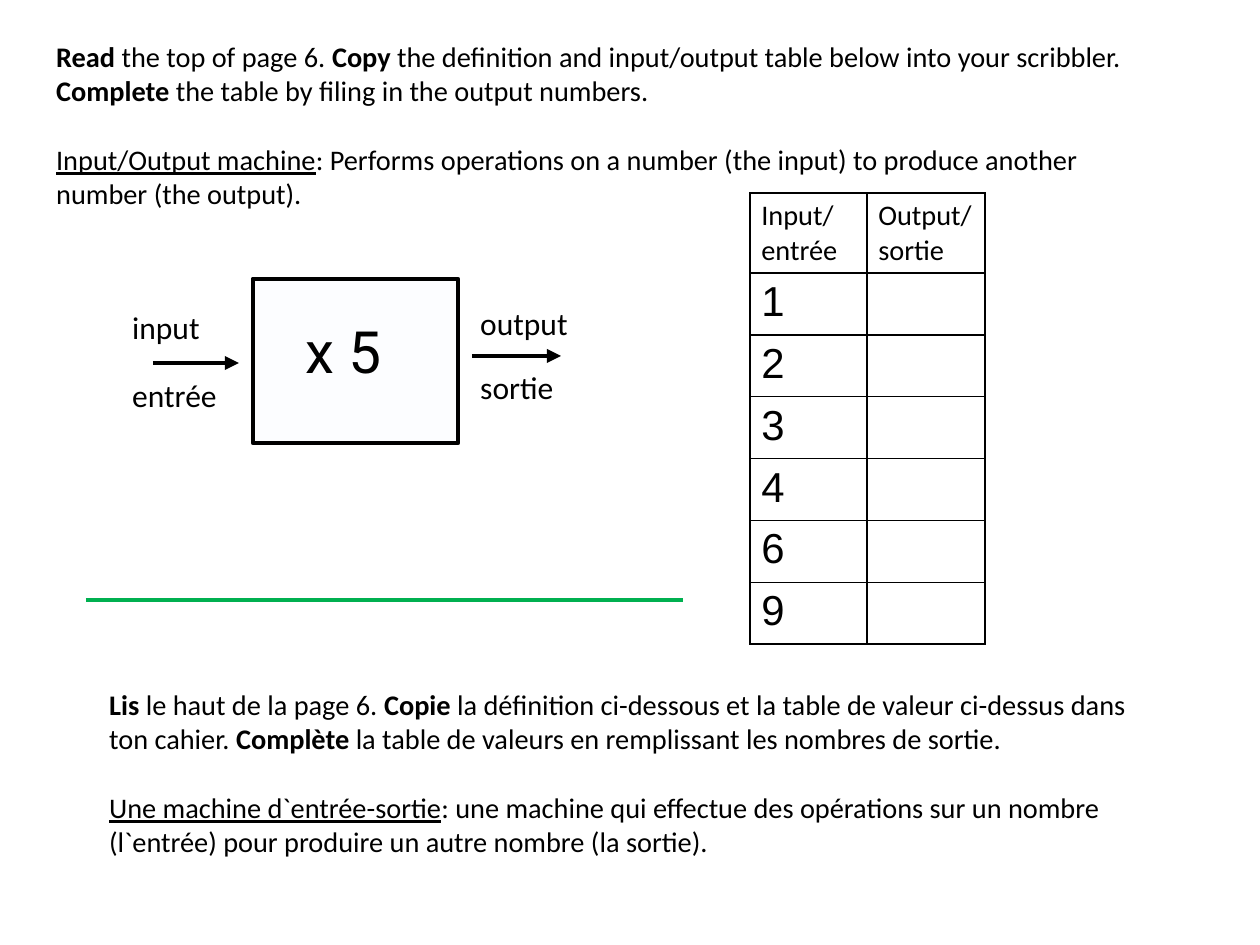
"""Build the bilingual input/output machine slide."""
from lxml.etree import SubElement
from pptx import Presentation
from pptx.dml.color import RGBColor
from pptx.enum.shapes import MSO_CONNECTOR, MSO_SHAPE
from pptx.oxml.ns import qn
from pptx.util import Pt

PX = 8064
COLORS = {"ink": "000000", "paper": "FFFFFF", "machine": "FCFDFF", "divider": "00B050"}


def add_text(paragraph, text, size=18, font="Calibri", bold=False, underline=False):
    run = paragraph.add_run()
    run.text = text
    run.font.size = Pt(size)
    run.font.name = font
    run.font.bold = bold
    run.font.underline = underline
    run.font.color.rgb = RGBColor.from_string(COLORS["ink"])


presentation = Presentation()
presentation.slide_width = 1260 * PX
presentation.slide_height = 945 * PX
slide = presentation.slides.add_slide(presentation.slide_layouts[6])
shapes = slide.shapes

instructions = [
    (98, 682, 1078, 184, [
        [("Lis", "bold"), (" le haut de la page 6. ", None), ("Copie", "bold"),
         (" la définition ci-dessous et la table de valeur ci-dessus dans ton cahier. ", None),
         ("Complète", "bold"),
         (" la table de valeurs en remplissant les nombres de sortie.", None)],
        [("Une machine d`entrée-sortie", "underline"),
         (": une machine qui effectue des opérations sur un nombre (l`entrée) "
          "pour produire un autre nombre (la sortie).", None)],
    ]),
    (45, 34, 1107, 223, [
        [("Read", "bold"), (" the top of page 6. ", None), ("Copy", "bold"),
         (" the definition and input/output table below into your scribbler. ", None),
         ("Complete", "bold"),
         (" the table by filing in the output numbers.", None)],
        [("Input/Output machine", "underline"),
         (": Performs operations on a number (the input) to produce another "
          "number (the output).", None)],
    ]),
]
for left, top, width, height, (task, definition) in instructions:
    frame = shapes.add_textbox(left * PX, top * PX, width * PX, height * PX).text_frame
    frame.word_wrap = True
    for text, emphasis in task:
        add_text(frame.paragraphs[0], text, **({emphasis: True} if emphasis else {}))
    paragraph = frame.add_paragraph()
    paragraph.space_before = Pt(22)
    for text, emphasis in definition:
        add_text(paragraph, text, **({emphasis: True} if emphasis else {}))

machine = shapes.add_shape(MSO_SHAPE.RECTANGLE, 253 * PX, 279 * PX, 205 * PX, 164 * PX)
machine.shadow.inherit = False
machine.fill.solid()
machine.fill.fore_color.rgb = RGBColor.from_string(COLORS["machine"])
machine.line.color.rgb = RGBColor.from_string(COLORS["ink"])
machine.line.width = Pt(3)

lines = [
    (153, 239, 363, "ink", True),
    (472, 561, 356, "ink", True),
    (86, 683, 600, "divider", False),
]
for start, end, y, color, arrow in lines:
    line = shapes.add_connector(MSO_CONNECTOR.STRAIGHT, start * PX, y * PX, end * PX, y * PX)
    line.line.color.rgb = RGBColor.from_string(COLORS[color])
    line.line.width = Pt(3)
    if arrow:
        SubElement(line.line._get_or_add_ln(), qn("a:tailEnd"), type="triangle")
    SubElement(line._element.spPr, qn("a:effectLst"))

labels = [
    ("input", 121, 302, 152, 50, 20, "Calibri"),
    ("entrée", 121, 370, 152, 50, 20, "Calibri"),
    ("output", 469, 298, 133, 50, 20, "Calibri"),
    ("sortie", 469, 362, 133, 50, 20, "Calibri"),
    ("x 5", 294, 310, 126, 57, 37, "Roboto"),
]
for text, left, top, width, height, size, font in labels:
    frame = shapes.add_textbox(left * PX, top * PX, width * PX, height * PX).text_frame
    frame.word_wrap = True
    add_text(frame.paragraphs[0], text, size=size, font=font)

rows = [("Input/ entrée", "Output/ sortie")] + [(number, "") for number in "123469"]
row_heights = [80] + [62, 61] * 3
column_widths = [117, 118]
table = shapes.add_table(
    len(rows), 2, 750 * PX, 193 * PX, sum(column_widths) * PX, sum(row_heights) * PX
).table
table.first_row = False
table.horz_banding = False
for column, width in zip(table.columns, column_widths):
    column.width = width * PX
for row_index, (texts, height) in enumerate(zip(rows, row_heights)):
    table.rows[row_index].height = height * PX
    style = {"size": 26.6, "font": "Arial"} if row_index else {}
    for column_index, text in enumerate(texts):
        cell = table.cell(row_index, column_index)
        if text:
            add_text(cell.text_frame.paragraphs[0], text, **style)
        properties = cell._tc.get_or_add_tcPr()
        for side in ("lnL", "lnR", "lnT", "lnB"):
            border = SubElement(properties, qn(f"a:{side}"), w=str(Pt(1)))
            border_fill = SubElement(border, qn("a:solidFill"))
            SubElement(border_fill, qn("a:srgbClr"), val=COLORS["ink"])
        cell.fill.solid()
        cell.fill.fore_color.rgb = RGBColor.from_string(COLORS["paper"])

presentation.save("out.pptx")
